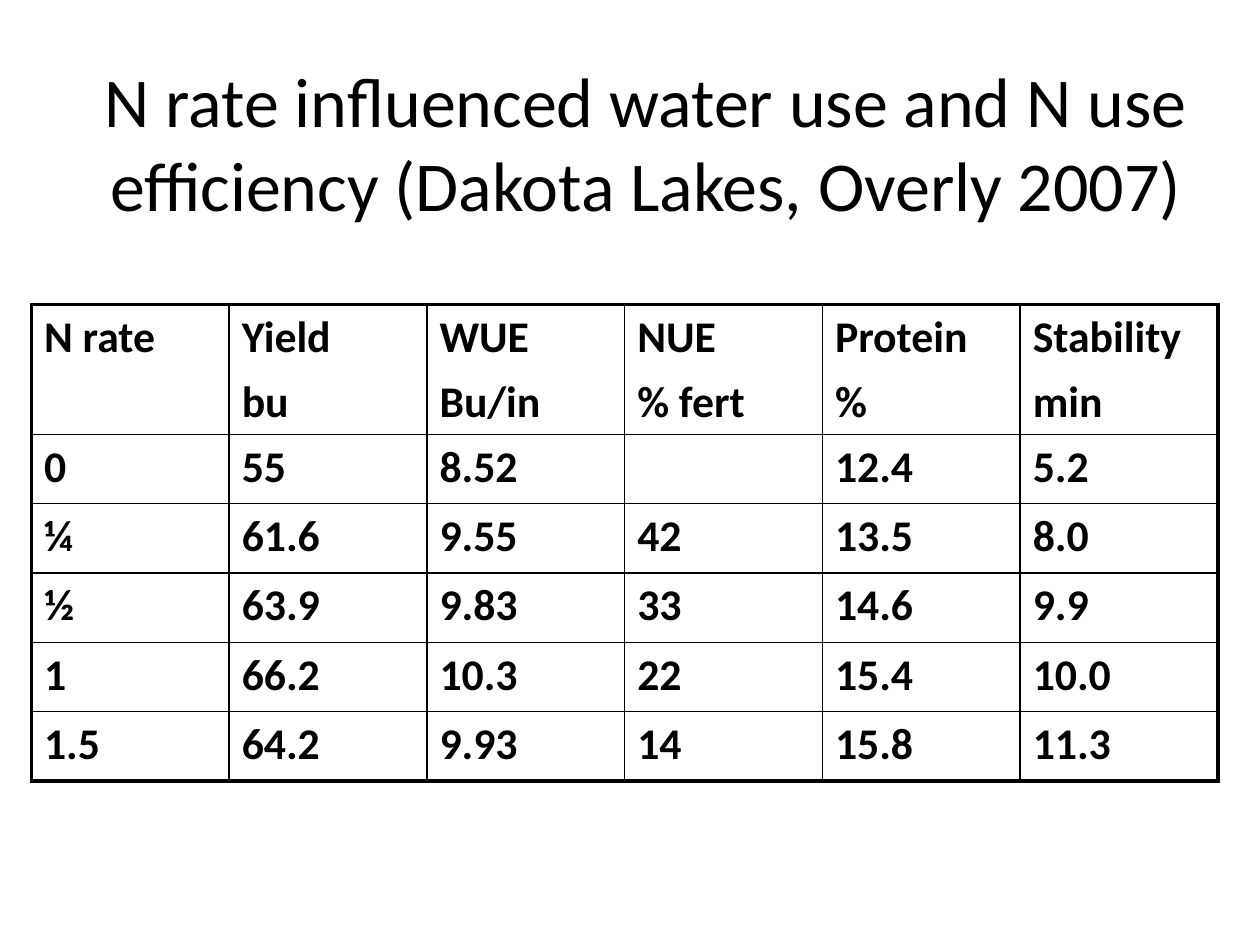
from lxml import etree
from pptx import Presentation
from pptx.dml.color import RGBColor
from pptx.enum.text import MSO_ANCHOR, PP_ALIGN
from pptx.oxml.ns import qn
from pptx.util import Pt

MIDDLE = MSO_ANCHOR.MIDDLE
CENTER = PP_ALIGN.CENTER

TITLE = "N rate influenced water use and N use efficiency (Dakota Lakes, Overly 2007)"
ROWS = [
    ["N rate", "Yield\nbu", "WUE\nBu/in", "NUE\n% fert", "Protein\n%", "Stability\nmin"],
    ["0", "55", "8.52", "", "12.4", "5.2"],
    ["¼", "61.6", "9.55", "42", "13.5", "8.0"],
    ["½", "63.9", "9.83", "33", "14.6", "9.9"],
    ["1", "66.2", "10.3", "22", "15.4", "10.0"],
    ["1.5", "64.2", "9.93", "14", "15.8", "11.3"],
]
FONT = "Calibri"
BLACK = "000000"
LEFT, TOP, WIDTH = 18, 174, 678
HEADER_H, ROW_H = 54, 39.6
OUTER, INNER = 2.25, 1


def color(value):
    return RGBColor.from_string(value)


def style(p, size, bold=False):
    p.font.name = FONT
    p.font.size = Pt(size)
    p.font.bold = bold
    p.font.color.rgb = color(BLACK)


def set_borders(cell, widths):
    tcPr = cell._tc.get_or_add_tcPr()
    for i, (side, width) in enumerate(widths.items()):
        ln = etree.Element(qn(f"a:{side}"), w=str(Pt(width)))
        fill = etree.SubElement(ln, qn("a:solidFill"))
        etree.SubElement(fill, qn("a:srgbClr"), val=BLACK)
        tcPr.insert(i, ln)


def add_title(s):
    tf = s.shapes.add_textbox(Pt(36), Pt(18), Pt(666), Pt(126)).text_frame
    tf.word_wrap = True
    tf.vertical_anchor = MIDDLE
    p = tf.paragraphs[0]
    p.text = TITLE
    p.alignment = CENTER
    style(p, 40)


def add_data_table(s):
    n_rows, n_cols = len(ROWS), len(ROWS[0])
    height = HEADER_H + ROW_H * (n_rows - 1)
    table = s.shapes.add_table(n_rows, n_cols, Pt(LEFT), Pt(TOP), Pt(WIDTH), Pt(height)).table
    table.first_row = table.horz_banding = False
    for column in table.columns:
        column.width = Pt(WIDTH / n_cols)
    for r, values in enumerate(ROWS):
        table.rows[r].height = Pt(ROW_H if r else HEADER_H)
        for c, value in enumerate(values):
            cell = table.cell(r, c)
            cell.text = value
            cell.fill.background()
            for p in cell.text_frame.paragraphs:
                p.space_before = Pt(7)
                style(p, 25, True)
            set_borders(cell, {
                "lnL": OUTER if c == 0 else INNER,
                "lnR": OUTER if c == n_cols - 1 else INNER,
                "lnT": OUTER if r == 0 else INNER,
                "lnB": OUTER if r == n_rows - 1 else INNER,
            })


def main():
    prs = Presentation()
    prs.slide_width, prs.slide_height = Pt(720), Pt(540)
    s = prs.slides.add_slide(prs.slide_layouts[6])
    add_title(s)
    add_data_table(s)
    prs.save("out.pptx")


if __name__ == "__main__":
    main()
